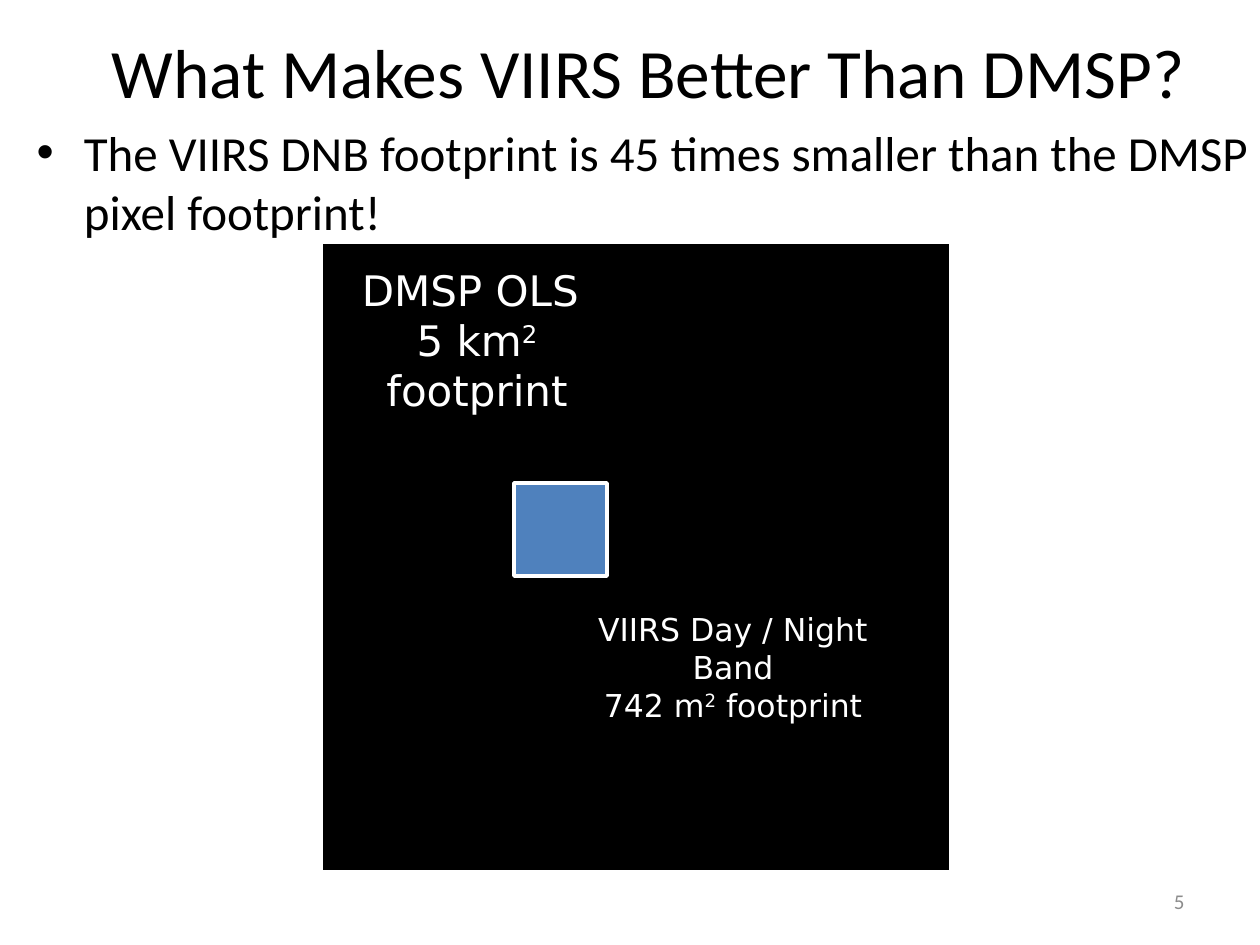
from pptx import Presentation
from pptx.dml.color import RGBColor
from pptx.enum.shapes import MSO_SHAPE
from pptx.enum.text import MSO_ANCHOR, MSO_AUTO_SIZE, PP_ALIGN
from pptx.util import Emu, Pt

BLACK = RGBColor(0x00, 0x00, 0x00)
WHITE = RGBColor(0xFF, 0xFF, 0xFF)
BLUE = RGBColor(0x4F, 0x81, 0xBD)
GRAY = RGBColor(0x8C, 0x8C, 0x8C)
RECTANGLE = MSO_SHAPE.RECTANGLE
TOP, MIDDLE = MSO_ANCHOR.TOP, MSO_ANCHOR.MIDDLE
LEFT, CENTER, RIGHT = PP_ALIGN.LEFT, PP_ALIGN.CENTER, PP_ALIGN.RIGHT
NO_AUTO_SIZE = MSO_AUTO_SIZE.NONE
EMU_PER_PX = 914400 / 126


def px(length):
    return Emu(round(length * EMU_PER_PX))


class SlideBuilder:
    main_font = "Calibri"
    label_font = "DejaVu Sans"

    def __init__(self, slide):
        self.slide = slide

    def style_runs(self, para, font, size, color, align):
        para.alignment = align
        para.space_before = Pt(0)
        for span in para.runs:
            span.font.name = font
            span.font.size = Pt(size)
            span.font.color.rgb = color

    def placeholder(self, index, bounds, text, size, align, anchor):
        box = self.slide.placeholders[index]
        box.left, box.top, box.width, box.height = map(px, bounds)
        frame = box.text_frame
        frame.text = text
        frame.word_wrap = True
        frame.auto_size = NO_AUTO_SIZE
        frame.vertical_anchor = anchor
        self.style_runs(frame.paragraphs[0], self.main_font, size, BLACK, align)
        return box

    def square(self, left, top, side, color):
        box = self.slide.shapes.add_shape(
            RECTANGLE, px(left), px(top), px(side), px(side))
        box.shadow.inherit = False
        box.fill.solid()
        box.fill.fore_color.rgb = color
        box.line.color.rgb = WHITE
        box.line.width = Pt(2)

    def text_box(self, bounds):
        frame = self.slide.shapes.add_textbox(*map(px, bounds)).text_frame
        frame.word_wrap = True
        return frame

    def footprint_label(self, bounds, right_margin, sensor, area, size):
        frame = self.text_box(bounds)
        frame.margin_left = 0
        frame.margin_right = px(right_margin)
        frame.text = sensor
        area_para = frame.add_paragraph()
        for text in (area, "2", " footprint"):
            area_para.add_run().text = text
        area_para.runs[1].font._element.set("baseline", "30000")
        for para in frame.paragraphs:
            self.style_runs(para, self.label_font, size, WHITE, CENTER)

    def page_number(self, bounds, text):
        frame = self.text_box(bounds)
        frame.vertical_anchor = MIDDLE
        frame.text = text
        self.style_runs(frame.paragraphs[0], self.main_font, 12, GRAY, RIGHT)


def main():
    deck = Presentation()
    deck.slide_width, deck.slide_height = px(1260), px(945)
    page = SlideBuilder(deck.slides.add_slide(deck.slide_layouts[1]))

    page.placeholder(0, (69, 3, 1159, 135),
                     "What Makes VIIRS Better Than DMSP?", 39.6, CENTER, MIDDLE)
    body = page.placeholder(
        1, (24, 116, 1236, 168),
        "The VIIRS DNB footprint is 45 times smaller than the DMSP pixel footprint!",
        28, LEFT, TOP)
    body.text_frame.margin_right = 0

    page.square(321, 242, 630, BLACK)
    page.square(514, 483, 93, BLUE)
    page.footprint_label((586, 604, 318, 89), 24,
                         "VIIRS Day / Night Band", "742 m", 18)
    page.footprint_label((349, 258, 287, 115), 31, "DMSP OLS ", "5 km", 24)
    page.page_number((903, 876, 294, 50), "5")

    deck.save("out.pptx")


if __name__ == "__main__":
    main()
